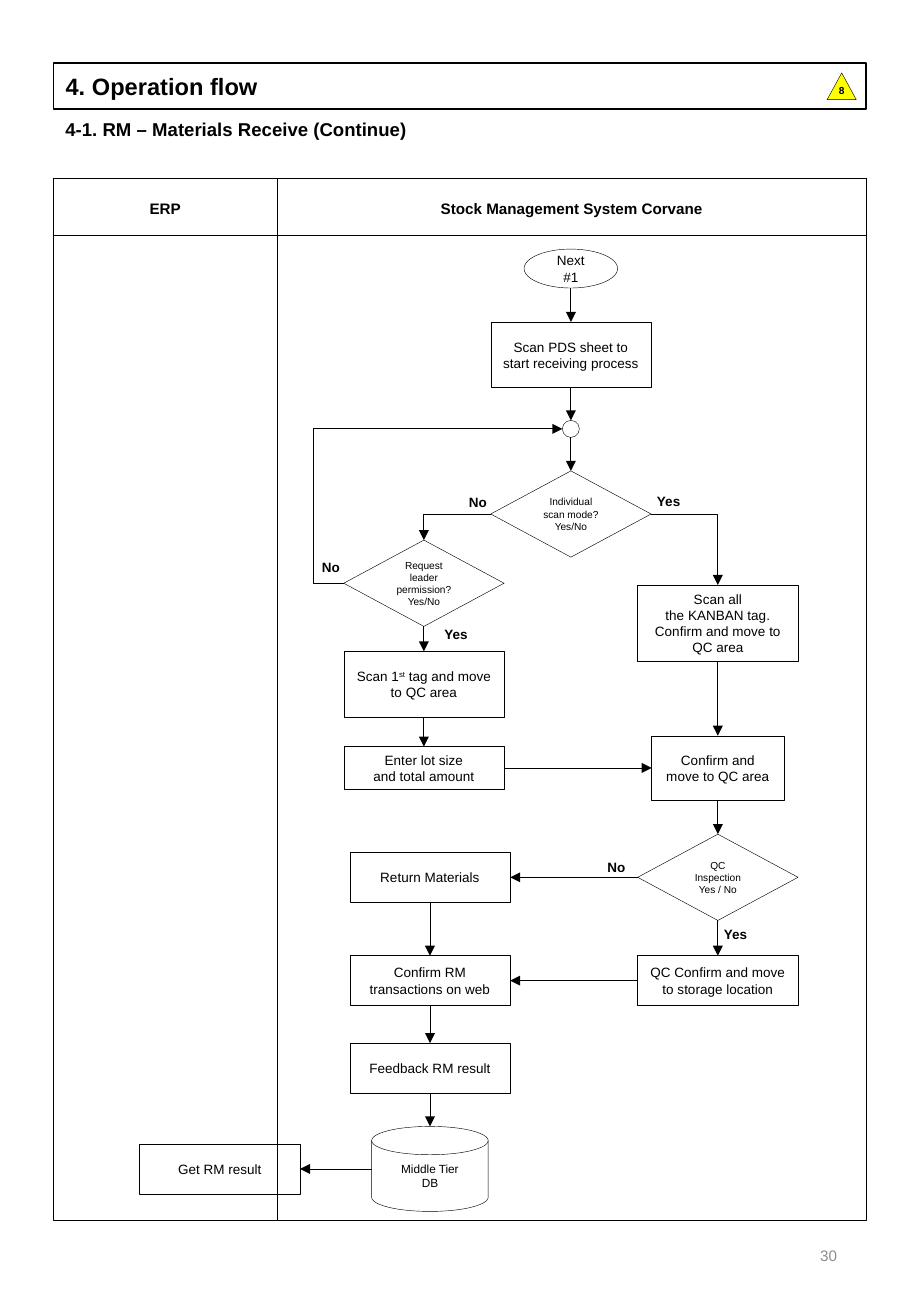
import pptx
import pptx.util
import pptx.dml.color
import pptx.enum.shapes
import pptx.enum.text
import pptx.oxml.ns
from lxml import etree

Inches = pptx.util.Inches
SHAPE = pptx.enum.shapes.MSO_SHAPE
CONNECTOR = pptx.enum.shapes.MSO_CONNECTOR
ALIGN = pptx.enum.text.PP_ALIGN
ANCHOR = pptx.enum.text.MSO_ANCHOR

# Content: page furniture
TITLE = "4. Operation flow"
SUBTITLE = "4-1. RM – Materials Receive (Continue)"
LANES = ["ERP", "Stock Management System Corvane"]
PAGE_NUMBER = "30"
REVISION = "8"

COLOURS = {"ink": "000000", "muted": "8C8C8C", "mark": "FFFF00"}

# Grid: centre lines of columns and rows, in inches
COLUMNS = {"erp": 1.81, "single": 3.49, "result": 3.54, "main": 4.7, "check": 5.91}
ROWS = {"start": 2.21, "scan": 2.92, "join": 3.53, "mode": 4.23, "leader": 4.8,
        "all": 5.13, "first": 5.63, "lot": 6.32, "inspect": 7.22,
        "confirm": 8.07, "feedback": 8.79, "store": 9.62}
FRAME = (0.44, 1.47, 6.69, 8.57)
HEADER_HEIGHT, LANE_SPLIT = 0.47, 2.28

# Kind: preset, width, height, text size
KINDS = {
    "start": (SHAPE.OVAL, 0.77, 0.32, 8),
    "join": (SHAPE.OVAL, 0.14, 0.14, 8),
    "decision": (SHAPE.FLOWCHART_DECISION, 1.32, 0.71, 6),
    "tall": (SHAPE.RECTANGLE, 1.32, 0.63, 8),
    "step": (SHAPE.RECTANGLE, 1.32, 0.54, 8),
    "short": (SHAPE.RECTANGLE, 1.32, 0.41, 8),
    "low": (SHAPE.RECTANGLE, 1.32, 0.35, 8),
    "narrow": (SHAPE.RECTANGLE, 1.09, 0.53, 8),
    "disk": (SHAPE.FLOWCHART_MAGNETIC_DISK, 0.96, 0.7, 7),
}

# Content: name, kind, column, row, paragraphs (^ marks off a superscript)
NODES = [
    ("next", "start", "main", "start", ["Next #1"]),
    ("scan sheet", "step", "main", "scan", ["Scan PDS sheet to start receiving process"]),
    ("join", "join", "main", "join", []),
    ("mode", "decision", "main", "mode", ["Individual scan mode?", "Yes/No"]),
    ("leader", "decision", "single", "leader", ["Request leader permission?", "Yes/No"]),
    ("scan first", "step", "single", "first", ["Scan 1^st^ tag and move to QC area"]),
    ("lot size", "low", "single", "lot", ["Enter lot size", "and total amount"]),
    ("scan all", "tall", "check", "all",
     ["Scan all", "the KANBAN tag.", "Confirm and move to QC area"]),
    ("move", "narrow", "check", "lot", ["Confirm and move to QC area"]),
    ("inspect", "decision", "check", "inspect", ["QC Inspection", "Yes / No"]),
    ("return", "short", "result", "inspect", ["Return Materials"]),
    ("storage", "short", "check", "confirm", ["QC Confirm and move to storage location"]),
    ("confirm", "short", "result", "confirm", ["Confirm RM transactions on web"]),
    ("feedback", "short", "result", "feedback", ["Feedback RM result"]),
    ("database", "disk", "result", "store", ["Middle Tier", "DB"]),
    ("get result", "short", "erp", "store", ["Get RM result"]),
]

# Flow: from, side, to, side
TOP, LEFT, BOTTOM, RIGHT = range(4)
DOWNWARD = [("next", "scan sheet"), ("scan sheet", "join"), ("join", "mode"),
            ("leader", "scan first"), ("scan first", "lot size"), ("scan all", "move"),
            ("move", "inspect"), ("inspect", "storage"), ("return", "confirm"),
            ("confirm", "feedback"), ("feedback", "database")]
LEFTWARD = [("inspect", "return"), ("storage", "confirm"), ("database", "get result")]
STRAIGHT = ([(a, BOTTOM, b, TOP) for a, b in DOWNWARD]
            + [(a, LEFT, b, RIGHT) for a, b in LEFTWARD]
            + [("lot size", RIGHT, "move", LEFT)])
# Bent flow adds the preset and its bend as a share of the width
BENT = [("mode", LEFT, "leader", TOP, "bentConnector2", None),
        ("mode", RIGHT, "scan all", TOP, "bentConnector2", None),
        ("leader", LEFT, "join", LEFT, "bentConnector3", -0.139)]

ANSWERS = [("No", 3.68, 4.02), ("Yes", 5.25, 4.01), ("No", 2.47, 4.55),
           ("Yes", 3.5, 5.1), ("No", 4.82, 7.02), ("Yes", 5.8, 7.57)]
ANSWER_SIZE = (0.51, 0.23)


def rgb(name):
    return pptx.dml.color.RGBColor.from_string(COLOURS[name])


def write(shape, lines, size, bold=False, align=ALIGN.CENTER, colour="ink", anchor=ANCHOR.MIDDLE):
    frame = shape.text_frame
    settings = {"word_wrap": True, "vertical_anchor": anchor,
                "auto_size": pptx.enum.text.MSO_AUTO_SIZE.NONE}
    for key, value in settings.items():
        setattr(frame, key, value)
    for number, line in enumerate(lines):
        para = frame.add_paragraph() if number else frame.paragraphs[0]
        para.alignment = align
        for part, text in enumerate(line.split("^")):
            span = para.add_run()
            span.text = text
            font = {"name": "Arial", "size": pptx.util.Pt(size), "bold": bold}
            for key, value in font.items():
                setattr(span.font, key, value)
            span.font.color.rgb = rgb(colour)
            if part % 2:
                span.font._element.set("baseline", "30000")


def outline(shape, weight):
    shape.line.color.rgb = rgb("ink")
    shape.line.width = pptx.util.Pt(weight)


def add_box(page, preset, place, fill=None):
    box = page.shapes.add_shape(preset, *map(Inches, place))
    box.shadow.inherit = False
    if fill:
        box.fill.solid()
        box.fill.fore_color.rgb = rgb(fill)
    else:
        box.fill.background()
    outline(box, 0.25)
    return box


def add_label(page, text, place, size, **style):
    write(page.shapes.add_textbox(*map(Inches, place)), [text], size, **style)


def add_line(page, kind, ends=(0, 0, 0, 0)):
    line = page.shapes.add_connector(kind, *map(Inches, ends))
    outline(line, 0.5)
    etree.SubElement(line._element.spPr, pptx.oxml.ns.qn("a:effectLst"))
    return line


def site(shape, side):
    """Number of the connection site at a side's middle."""
    if shape.auto_shape_type == SHAPE.OVAL:
        return side * 2
    return side + (shape.auto_shape_type == SHAPE.FLOWCHART_MAGNETIC_DISK)


def add_arrow(page, nodes, flow, preset=None, bend=None):
    source, source_side, target, target_side = flow
    arrow = add_line(page, CONNECTOR.ELBOW if preset else CONNECTOR.STRAIGHT)
    arrow.begin_connect(nodes[source], source_side)
    arrow.end_connect(nodes[target], target_side)
    for tag, name, side in (("stCxn", source, source_side), ("endCxn", target, target_side)):
        arrow._element.xpath(f".//a:{tag}")[0].set("idx", str(site(nodes[name], side)))
    etree.SubElement(arrow.line._get_or_add_ln(), pptx.oxml.ns.qn("a:tailEnd"), type="triangle")
    if preset:
        geometry = arrow._element.xpath(".//a:prstGeom")[0]
        geometry.set("prst", preset)
        if bend is not None:
            guides = geometry.xpath("a:avLst")[0]
            etree.SubElement(guides, pptx.oxml.ns.qn("a:gd"), name="adj1",
                             fmla=f"val {round(bend * 100000)}")


def main():
    deck = pptx.Presentation()
    deck.slide_width, deck.slide_height = Inches(7.5), Inches(10.83)
    page = deck.slides.add_slide(deck.slide_layouts[5])
    left, top, width, height = FRAME

    # Heading
    title = page.shapes.title
    title_place = zip(("left", "top", "width", "height"), (left, 0.52, width, 0.38))
    for key, value in title_place:
        setattr(title, key, Inches(value))
    outline(title, 1)
    write(title, [TITLE], 14, bold=True, align=ALIGN.LEFT)
    add_label(page, SUBTITLE, (left, 0.92, width, 0.29), 11, bold=True,
              align=ALIGN.LEFT, anchor=ANCHOR.TOP)
    mark = add_box(page, SHAPE.ISOSCELES_TRIANGLE, (6.81, 0.6, 0.24, 0.22), "mark")
    mark.text_frame.margin_top = 0
    write(mark, [REVISION], 6, bold=True)

    # Swim lanes
    add_box(page, SHAPE.RECTANGLE, FRAME)
    add_box(page, SHAPE.RECTANGLE, (left, top, width, HEADER_HEIGHT))
    add_line(page, CONNECTOR.STRAIGHT, (LANE_SPLIT, top, LANE_SPLIT, top + height))
    edges = (left, LANE_SPLIT, left + width)
    for lane, start, end in zip(LANES, edges, edges[1:]):
        add_label(page, lane, (start, top + 0.01, end - start, HEADER_HEIGHT), 9, bold=True)

    # Steps
    nodes = {}
    for name, kind, column, row, lines in NODES:
        preset, wide, high, size = KINDS[kind]
        place = (COLUMNS[column] - wide / 2, ROWS[row] - high / 2, wide, high)
        nodes[name] = add_box(page, preset, place)
        write(nodes[name], lines, size)

    # Flow and answers
    for flow in STRAIGHT:
        add_arrow(page, nodes, flow)
    for *flow, preset, bend in BENT:
        add_arrow(page, nodes, flow, preset, bend)
    for text, x, y in ANSWERS:
        add_label(page, text, (x, y, *ANSWER_SIZE), 8, bold=True)

    # Page number
    add_label(page, PAGE_NUMBER, (5.3, 10.04, 1.69, 0.58), 9, align=ALIGN.RIGHT, colour="muted")
    deck.save("out.pptx")


if __name__ == "__main__":
    main()
